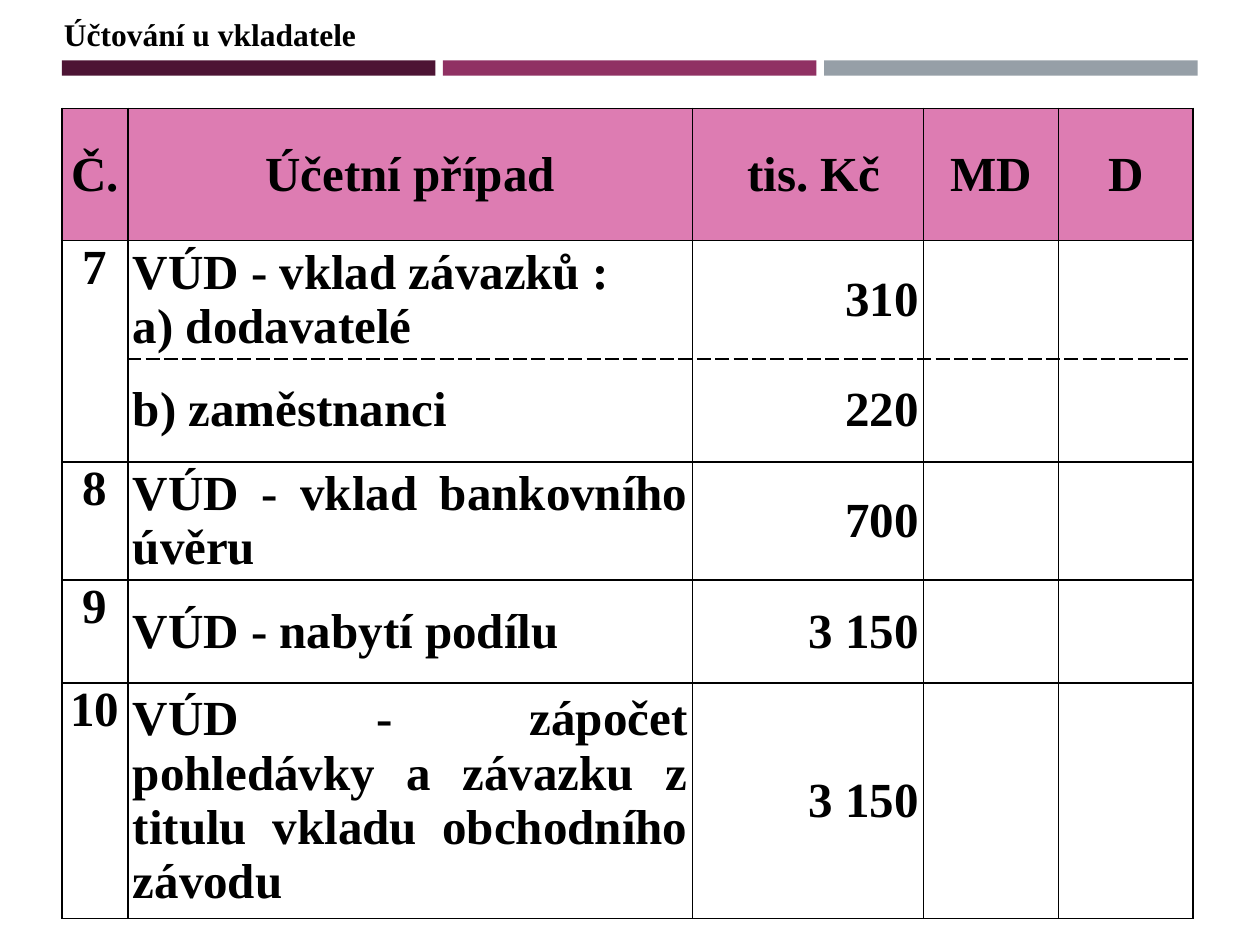
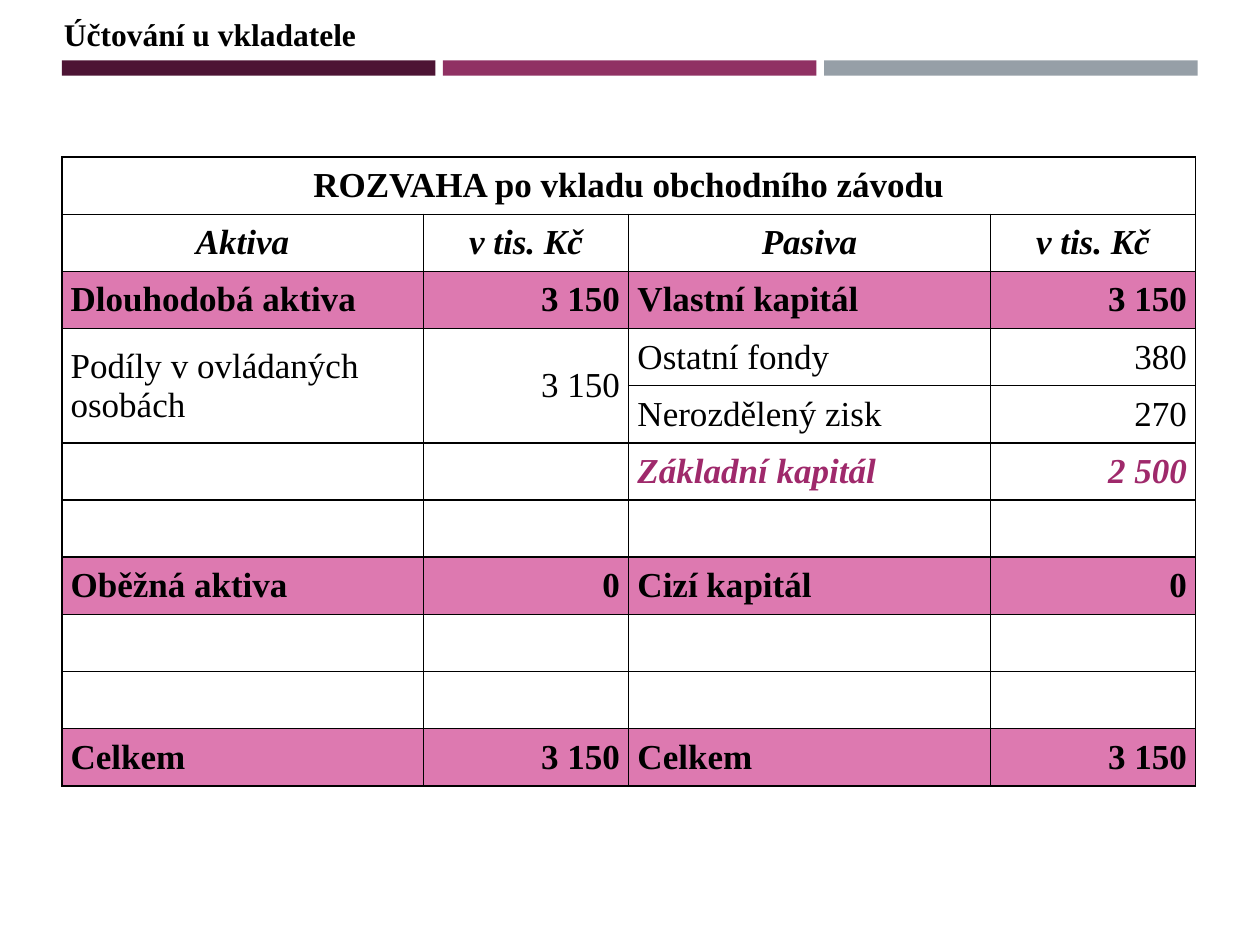
from lxml.etree import SubElement
from pptx import Presentation
from pptx.dml.color import RGBColor
from pptx.enum.shapes import MSO_SHAPE
from pptx.enum.text import MSO_ANCHOR, MSO_AUTO_SIZE, PP_ALIGN
from pptx.oxml.ns import qn
from pptx.util import Inches, Pt

COLORS = {
    "plum": "4D1434", "magenta": "903163", "grey": "969FA7", "ink": "000000",
    "head": "DD7CB2", "total": "DD79B0", "accent": "9F296B",
}
FONT = "Times New Roman"
LEFT, CENTER, RIGHT, JUSTIFY = PP_ALIGN.LEFT, PP_ALIGN.CENTER, PP_ALIGN.RIGHT, PP_ALIGN.JUSTIFY

deck = Presentation()
deck.slide_width, deck.slide_height = Inches(10), Inches(7.5)
# All lengths below are percentages of the slide's width or height.
ACROSS, DOWN = deck.slide_width / 100, deck.slide_height / 100
MARGIN = 4.9


def start_table(top, columns, rows):
    """Add a slide with heading and colour bands, and return its bare table."""
    slide = deck.slides.add_slide(deck.slide_layouts[6])
    for position, color in enumerate(("plum", "magenta", "grey")):
        band = slide.shapes.add_shape(
            MSO_SHAPE.RECTANGLE, int((MARGIN + 30.25 * position) * ACROSS),
            int(6.4 * DOWN), int(29.65 * ACROSS), int(1.6 * DOWN))
        band.shadow.inherit = False
        band.fill.solid()
        band.fill.fore_color.rgb = RGBColor.from_string(COLORS[color])
        band.line.fill.background()

    heading = slide.shapes.add_textbox(
        int(4.1 * ACROSS), int(0.93 * DOWN), int(25.4 * ACROSS), int(5.4 * DOWN)).text_frame
    heading.word_wrap = False
    heading.auto_size = MSO_AUTO_SIZE.SHAPE_TO_FIT_TEXT
    heading.text = "Účtování u vkladatele"
    font = heading.paragraphs[0].runs[0].font
    for key, value in {"name": FONT, "size": Pt(18), "bold": True}.items():
        setattr(font, key, value)
    font.color.rgb = RGBColor.from_string(COLORS["ink"])

    table = slide.shapes.add_table(
        len(rows), len(columns), int(MARGIN * ACROSS), int(top * DOWN),
        int(sum(columns) * ACROSS), int(sum(rows) * DOWN)).table
    table.first_row = table.horz_banding = False
    for column, width in zip(table.columns, columns):
        column.width = int(width * ACROSS)
    for row, height in zip(table.rows, rows):
        row.height = int(height * DOWN)
    return table


def fill_cell(cell, text, align, size, inset, fill=None, color="ink",
              anchor=MSO_ANCHOR.MIDDLE, dashed="", bold=True, italic=False):
    """Write and frame one cell; dashed names the side (T or B) drawn broken."""
    layout = {"margin_left": Inches(inset), "margin_right": Inches(inset),
              "margin_top": 0, "margin_bottom": 0, "vertical_anchor": anchor}
    for key, value in layout.items():
        setattr(cell, key, value)
    for side in "LRTB":
        border = SubElement(cell._tc.get_or_add_tcPr(), qn(f"a:ln{side}"), w=str(Pt(1)))
        paint = SubElement(border, qn("a:solidFill"))
        SubElement(paint, qn("a:srgbClr"), val=COLORS["ink"])
        SubElement(border, qn("a:prstDash"), val="dash" if side == dashed else "solid")
    if fill:
        cell.fill.solid()
        cell.fill.fore_color.rgb = RGBColor.from_string(COLORS[fill])
    else:
        cell.fill.background()
    if text:
        cell.text_frame.text = text
        for paragraph in cell.text_frame.paragraphs:
            paragraph.alignment = align
            font = paragraph.runs[0].font
            style = {"name": FONT, "size": Pt(size), "bold": bold, "italic": italic}
            for key, value in style.items():
                setattr(font, key, value)
            font.color.rgb = RGBColor.from_string(COLORS[color])


# Slide 1: journal entries
entries = [
    ("Č.", "Účetní případ", " tis. Kč", "MD", "D"),
    ("7", "VÚD - vklad závazků :\na) dodavatelé", "310", "", ""),
    ("", "b) zaměstnanci", "220", "", ""),
    ("8", "VÚD - vklad bankovního úvěru", "700", "", ""),
    ("9", "VÚD - nabytí podílu", "3 150", "", ""),
    ("10", "VÚD - zápočet pohledávky a závazku z titulu vkladu obchodního závodu",
     "3 150", "", ""),
]
journal = start_table(11.47, [5.25, 44.8, 18.35, 10.7, 10.7],
                      [14, 12.5, 10.9, 12.5, 10.9, 24.93])
journal.cell(1, 0).merge(journal.cell(2, 0))
entry_aligns = (CENTER, JUSTIFY, RIGHT, CENTER, CENTER)
for r, entry in enumerate(entries):
    for c, text in enumerate(entry):
        is_head = r == 0
        fill_cell(journal.cell(r, c), text, CENTER if is_head else entry_aligns[c], 28, 0.04,
                  fill="head" if is_head else None,
                  anchor=MSO_ANCHOR.TOP if c == 0 and not is_head else MSO_ANCHOR.MIDDLE,
                  dashed={1: "B", 2: "T"}.get(r, "") if c else "")

# Slide 2: balance sheet after the contribution
balance = [
    ("ROZVAHA po vkladu obchodního závodu", "", "", ""),
    ("Aktiva", "v tis. Kč", "Pasiva", "v tis. Kč"),
    ("Dlouhodobá aktiva", "3 150", "Vlastní kapitál", "3 150"),
    ("Podíly v ovládaných\nosobách", "3 150", "Ostatní fondy", "380"),
    ("", "", "Nerozdělený zisk", "270"),
    ("", "", "Základní kapitál", "2 500"),
    ("", "", "", ""),
    ("Oběžná aktiva", "0", "Cizí kapitál", "0"),
    ("", "", "", ""),
    ("", "", "", ""),
    ("Celkem", "3 150", "Celkem", "3 150"),
]
heading_style = {"align": CENTER}
column_style = {"align": CENTER, "italic": True}
total_style = {"fill": "total"}
capital_style = {"color": "accent", "italic": True}
row_styles = {0: heading_style, 1: column_style, 2: total_style, 5: capital_style,
              7: total_style, 10: total_style}
sheet = start_table(16.63, [28.7, 16.3] * 2, [6.05] * len(balance))
sheet.cell(0, 0).merge(sheet.cell(0, 3))
for c in (0, 1):
    sheet.cell(3, c).merge(sheet.cell(4, c))
balance_aligns = (LEFT, RIGHT, JUSTIFY, RIGHT)
for r, line in enumerate(balance):
    for c, text in enumerate(line):
        style = {"align": balance_aligns[c], **row_styles.get(r, {"bold": False})}
        fill_cell(sheet.cell(r, c), text, size=20, inset=0.07, **style)

deck.save("out.pptx")
